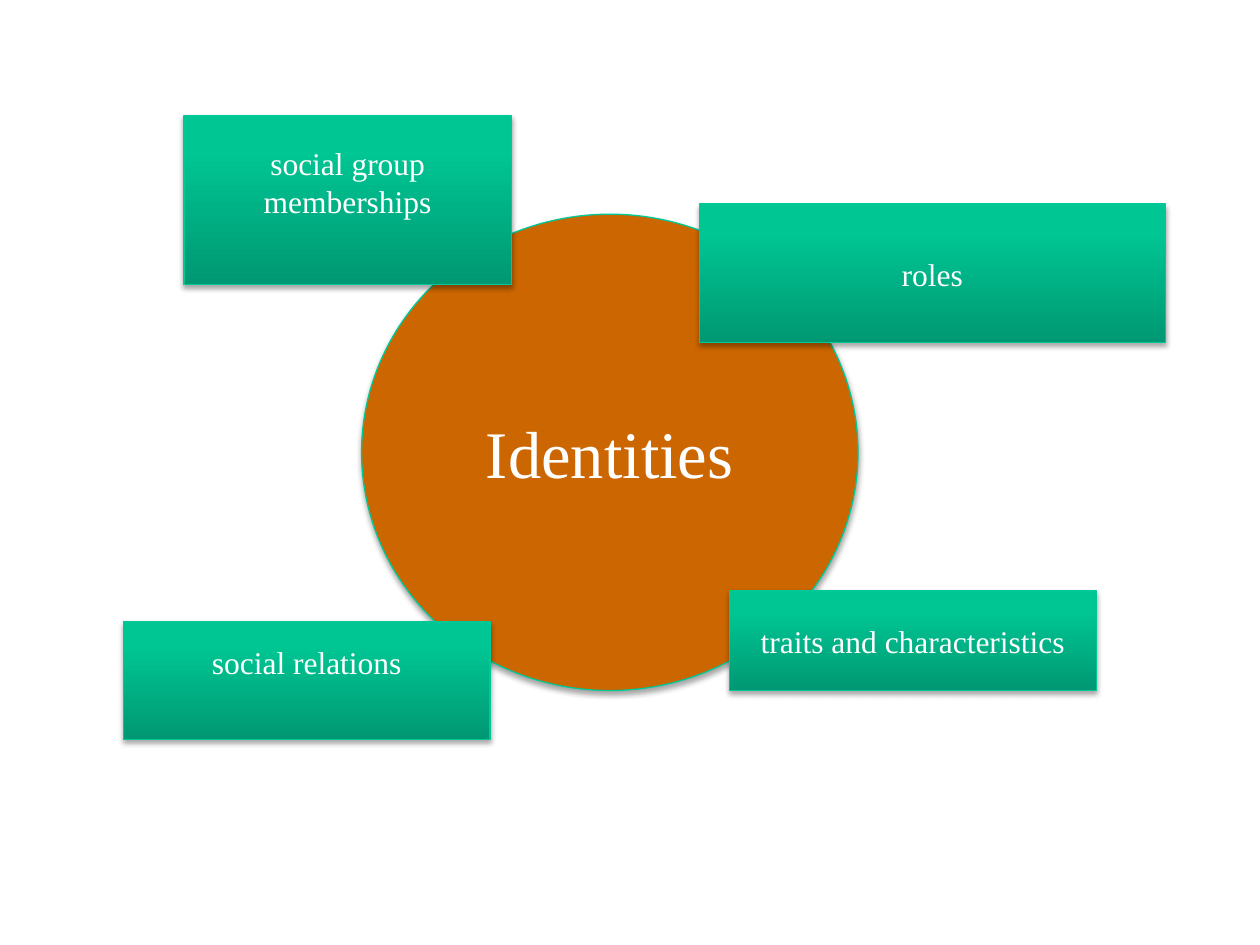
from copy import deepcopy
from dataclasses import dataclass

from lxml import etree
from pptx import Presentation
from pptx.dml.color import RGBColor
from pptx.enum.shapes import MSO_SHAPE
from pptx.enum.text import MSO_ANCHOR, PP_ALIGN
from pptx.oxml.ns import qn
from pptx.util import Inches, Pt

OVAL, RECTANGLE = MSO_SHAPE.OVAL, MSO_SHAPE.RECTANGLE
MIDDLE, CENTER = MSO_ANCHOR.MIDDLE, PP_ALIGN.CENTER
WIDTH, HEIGHT = Inches(10), Inches(7.5)
BLANK_LAYOUT = 6


@dataclass(frozen=True)
class Theme:
    font: str = "Times New Roman"
    text: str = "FFFFFF"
    hub: str = "CC6600"
    outline: str = "00C896"
    gradient: tuple = ((0, "009872"), (0.8, "00C694"), (1, "00C795"))
    hub_size: int = 38
    facet_size: int = 18
    outline_width: float = 0.75


THEME = Theme()
RAISED = Inches(0.34)  # bottom inset that lifts a label by half a line
LEVEL = Inches(0.05)

# Label, bottom inset, and (left, top, width, height) in percent of the slide
FACETS = [
    ("traits and characteristics", LEVEL, (57.9, 62.53, 29.1, 10.53)),
    ("social relations", RAISED, (9.8, 65.73, 29.1, 12.53)),
    ("roles", LEVEL, (55.5, 21.6, 37, 14.67)),
    ("social group memberships", RAISED, (14.6, 12.27, 26, 17.87)),
]


def add_soft_shadow(shape):
    """Cast a blurred shadow straight down."""
    shape.shadow.inherit = False
    effects = shape._element.spPr.find(qn("a:effectLst"))
    shadow = etree.SubElement(
        effects, qn("a:outerShdw"), blurRad=str(Pt(3.1)), dist=str(Pt(1.8)),
        dir="5400000", rotWithShape="0")
    color = etree.SubElement(shadow, qn("a:srgbClr"), val="000000")
    etree.SubElement(color, qn("a:alpha"), val="35000")


def fill_gradient(shape):
    """Shade from the dark bottom edge to the light top edge."""
    shape.fill.gradient()
    shape.fill.gradient_angle = 90
    stop_list = shape._element.spPr.find(qn("a:gradFill")).find(qn("a:gsLst"))
    stop_list.append(deepcopy(stop_list[-1]))
    for stop, (position, color) in zip(shape.fill.gradient_stops, THEME.gradient):
        stop.position = position
        stop.color.rgb = RGBColor.from_string(color)


def add_labelled_shape(slide, kind, box, label, size, bottom_inset=LEVEL):
    """Add an outlined, shadowed shape with a centred label."""
    left, top, width, height = (
        round(extent * share / 100)
        for extent, share in zip((WIDTH, HEIGHT) * 2, box))
    shape = slide.shapes.add_shape(kind, left, top, width, height)
    shape.line.color.rgb = RGBColor.from_string(THEME.outline)
    shape.line.width = Pt(THEME.outline_width)
    add_soft_shadow(shape)

    frame = shape.text_frame
    frame.word_wrap = True
    frame.vertical_anchor = MIDDLE
    frame.margin_bottom = bottom_inset
    paragraph = frame.paragraphs[0]
    paragraph.text = label
    paragraph.alignment = CENTER
    paragraph.font.name = THEME.font
    paragraph.font.size = Pt(size)
    paragraph.font.color.rgb = RGBColor.from_string(THEME.text)
    return shape


def add_hub(slide):
    hub = add_labelled_shape(
        slide, OVAL, (28.7, 22.67, 39.4, 50.4), "Identities", THEME.hub_size)
    hub.fill.solid()
    hub.fill.fore_color.rgb = RGBColor.from_string(THEME.hub)


def add_facet(slide, label, bottom_inset, box):
    facet = add_labelled_shape(
        slide, RECTANGLE, box, label, THEME.facet_size, bottom_inset)
    fill_gradient(facet)


def main():
    deck = Presentation()
    deck.slide_width, deck.slide_height = WIDTH, HEIGHT
    slide = deck.slides.add_slide(deck.slide_layouts[BLANK_LAYOUT])

    # Central concept, then the facets overlapping its rim
    add_hub(slide)
    for facet in FACETS:
        add_facet(slide, *facet)

    deck.save("out.pptx")


if __name__ == "__main__":
    main()
